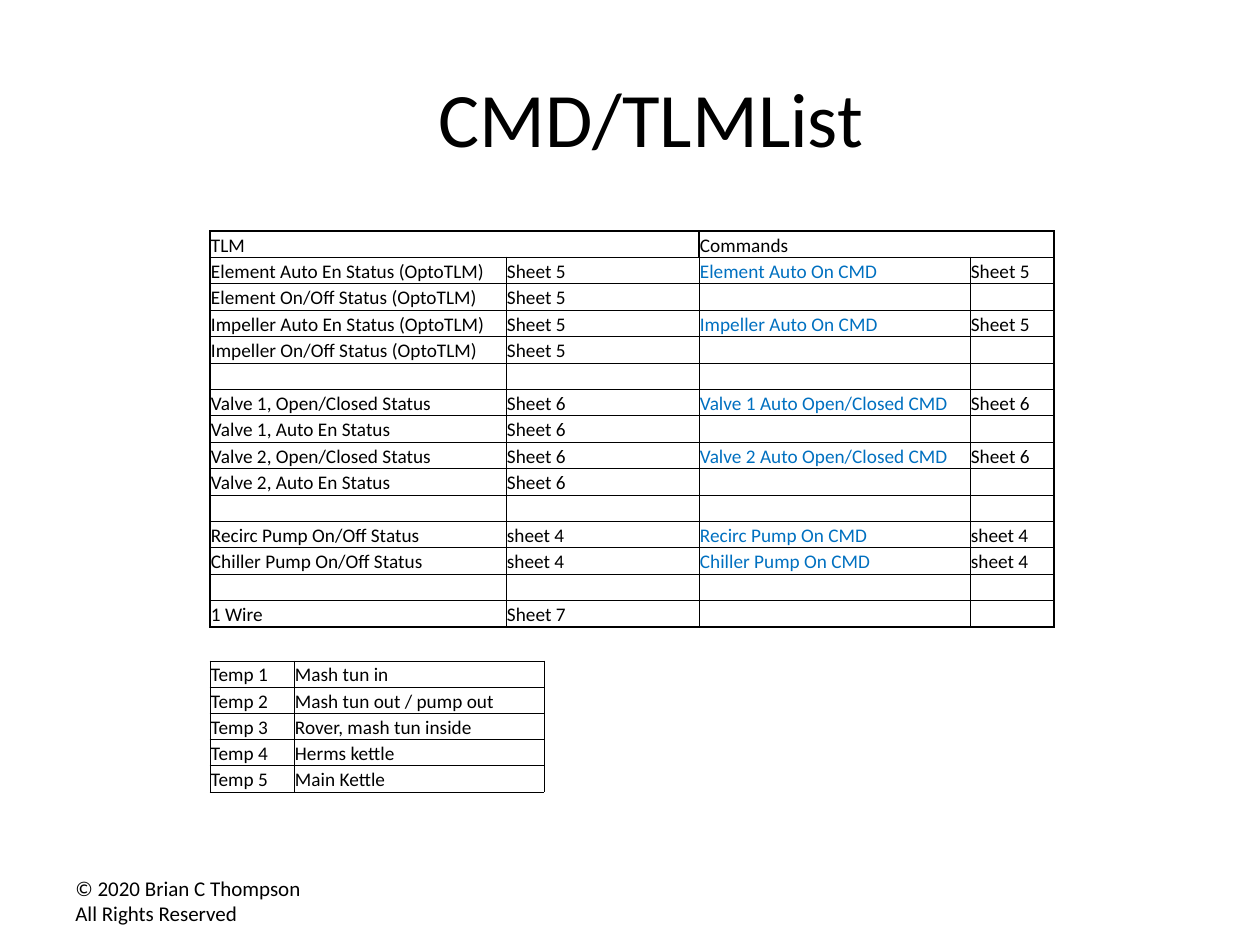
from dataclasses import dataclass

from lxml.etree import SubElement
from pptx import Presentation
from pptx.dml.color import RGBColor
from pptx.enum.text import MSO_ANCHOR as Anchor, PP_ALIGN as Align
from pptx.oxml.ns import qn
from pptx.util import Emu, Pt

EMU_PER_PX = 914400 / 126
FONT = "Calibri"
BLACK = RGBColor(0x00, 0x00, 0x00)
BLUE = RGBColor(0x00, 0x70, 0xC0)
CELL_SIZE = 11
THIN, THICK = 0.5, 1.0


@dataclass(frozen=True)
class Label:
    left: int
    top: int
    width: int
    height: int
    lines: tuple[str, ...]
    size: int
    align: Align


@dataclass(frozen=True)
class Grid:
    left: int
    top: int
    height: int
    cols: tuple[int, ...]
    rows: tuple[tuple[str, ...], ...]
    blue_col: int | None = None
    framed: bool = False


BLANK_ROW = ("", "", "", "")

LABELS = (
    Label(158, 38, 986, 157, ("CMD/TLMList",), 44, Align.CENTER),
    Label(63, 876, 294, 50,
          ("© 2020 Brian C Thompson", "All Rights Reserved"), 12, Align.LEFT),
)

GRIDS = (
    Grid(210, 231, 396, (296, 193, 271, 84), (
        ("TLM", "", "Commands", ""),
        ("Element Auto En Status (OptoTLM)", "Sheet 5", "Element Auto On CMD", "Sheet 5"),
        ("Element On/Off Status (OptoTLM)", "Sheet 5", "", ""),
        ("Impeller Auto En Status (OptoTLM)", "Sheet 5", "Impeller Auto On CMD", "Sheet 5"),
        ("Impeller On/Off Status (OptoTLM)", "Sheet 5", "", ""),
        BLANK_ROW,
        ("Valve 1, Open/Closed Status", "Sheet 6", "Valve 1 Auto Open/Closed CMD", "Sheet 6"),
        ("Valve 1, Auto En Status", "Sheet 6", "", ""),
        ("Valve 2, Open/Closed Status", "Sheet 6", "Valve 2 Auto Open/Closed CMD", "Sheet 6"),
        ("Valve 2, Auto En Status", "Sheet 6", "", ""),
        BLANK_ROW,
        ("Recirc Pump On/Off Status", "sheet 4", "Recirc Pump On CMD", "sheet 4"),
        ("Chiller Pump On/Off Status", "sheet 4", "Chiller Pump On CMD", "sheet 4"),
        BLANK_ROW,
        ("1 Wire", "Sheet 7", "", ""),
    ), blue_col=2, framed=True),
    Grid(210, 661, 131, (84, 250), (
        ("Temp 1", "Mash tun in"),
        ("Temp 2", "Mash tun out / pump out"),
        ("Temp 3", "Rover, mash tun inside"),
        ("Temp 4", "Herms kettle"),
        ("Temp 5", "Main Kettle"),
    )),
)


def px(n: int) -> Emu:
    return Emu(round(n * EMU_PER_PX))


def add_run(p, text: str, size: int, color: RGBColor) -> None:
    r = p.add_run()
    r.text = text
    r.font.name = FONT
    r.font.size = Pt(size)
    r.font.color.rgb = color


def add_label(slide, label: Label) -> None:
    sp = slide.shapes.add_textbox(
        px(label.left), px(label.top), px(label.width), px(label.height))
    tf = sp.text_frame
    tf.word_wrap = True
    tf.vertical_anchor = Anchor.MIDDLE
    for i, line in enumerate(label.lines):
        p = tf.add_paragraph() if i else tf.paragraphs[0]
        p.alignment = label.align
        add_run(p, line, label.size, BLACK)


def border_widths(grid: Grid, row: int, col: int) -> dict[str, float]:
    widths = dict.fromkeys("LRTB", THIN)
    if not grid.framed:
        return widths
    last_row, last_col = len(grid.rows) - 1, len(grid.cols) - 1
    if row == 0:
        starts_group = col % 2 == 0
        return {"L": THICK if starts_group else 0,
                "R": 0 if starts_group else THICK, "T": THICK, "B": THICK}
    if col == 0:
        widths["L"] = THICK
    if col == last_col:
        widths["R"] = THICK
    if row == 1:
        widths["T"] = THICK
    if row == last_row:
        widths["B"] = THICK
    return widths


def set_borders(cell, widths: dict[str, float]) -> None:
    tc_pr = cell._tc.get_or_add_tcPr()
    for side, width in widths.items():
        ln = SubElement(tc_pr, qn(f"a:ln{side}"), w=str(Pt(width)))
        if width:
            fill = SubElement(ln, qn("a:solidFill"))
            SubElement(fill, qn("a:srgbClr"), val=str(BLACK))
        else:
            SubElement(ln, qn("a:noFill"))


def fill_cell(cell, text: str, color: RGBColor) -> None:
    cell.margin_left = cell.margin_right = cell.margin_top = px(1)
    cell.margin_bottom = 0
    cell.vertical_anchor = Anchor.BOTTOM
    p = cell.text_frame.paragraphs[0]
    if text:
        add_run(p, text, CELL_SIZE, color)
    else:
        SubElement(p._p, qn("a:endParaRPr"), sz=str(CELL_SIZE * 100))


def add_grid(slide, grid: Grid) -> None:
    n = len(grid.rows)
    table = slide.shapes.add_table(
        n, len(grid.cols), px(grid.left), px(grid.top),
        px(sum(grid.cols)), px(grid.height)).table
    table.first_row = table.horz_banding = False
    for column, width in zip(table.columns, grid.cols):
        column.width = px(width)
    for i, texts in enumerate(grid.rows):
        table.rows[i].height = Emu(px(grid.height) // n)
        for j, text in enumerate(texts):
            cell = table.cell(i, j)
            color = BLUE if i and j == grid.blue_col else BLACK
            fill_cell(cell, text, color)
            set_borders(cell, border_widths(grid, i, j))
            cell.fill.background()


def main() -> None:
    prs = Presentation()
    prs.slide_width, prs.slide_height = px(1260), px(945)
    slide = prs.slides.add_slide(prs.slide_layouts[6])
    for grid in GRIDS:
        add_grid(slide, grid)
    for label in LABELS:
        add_label(slide, label)
    prs.save("out.pptx")


if __name__ == "__main__":
    main()
